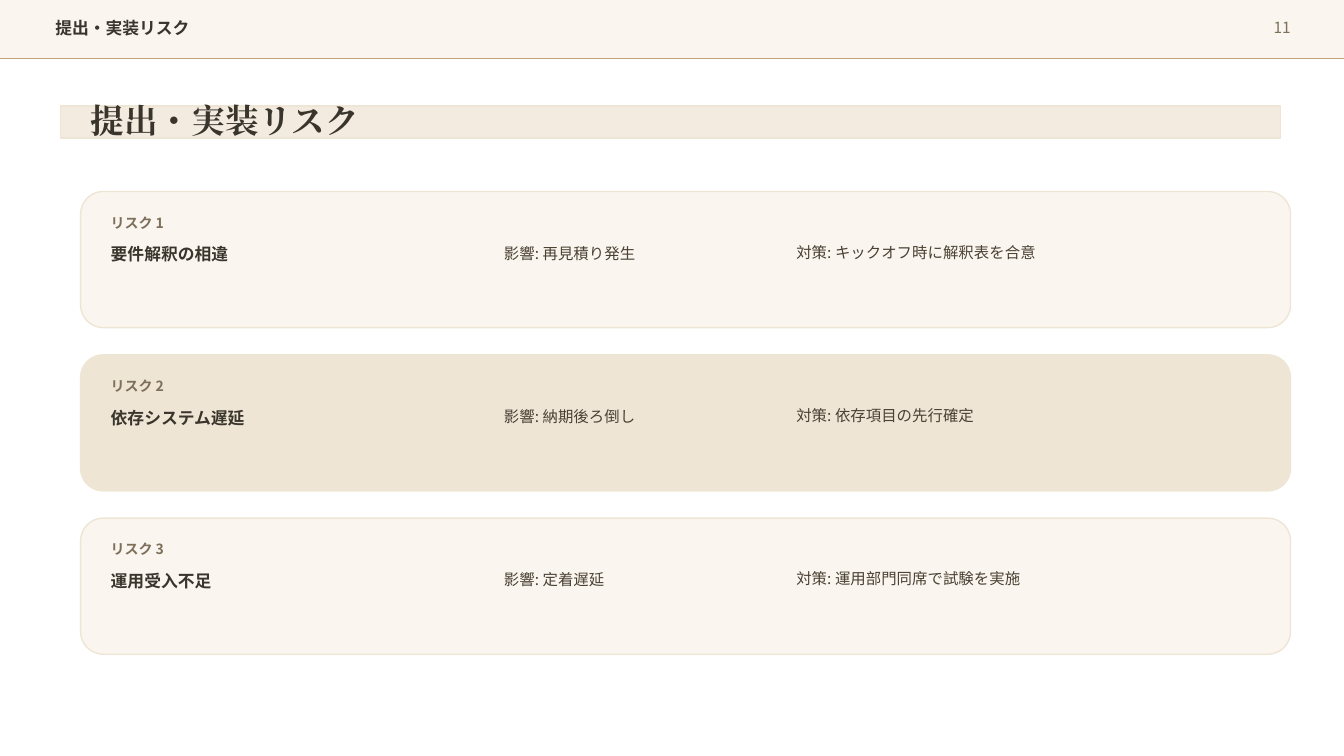
from lxml.etree import SubElement
from pptx import Presentation
from pptx.dml.color import RGBColor
from pptx.enum.shapes import MSO_CONNECTOR, MSO_SHAPE
from pptx.enum.text import MSO_ANCHOR, MSO_AUTO_SIZE, PP_ALIGN
from pptx.oxml.ns import qn
from pptx.util import Pt

PX = 9144  # 100 px to the inch
WIDTH, HEIGHT = 1333, 750
COLORS = {
    "ink": "3A352C",
    "body": "4A4033",
    "muted": "7D6F5A",
    "cream": "FAF6EF",
    "sand": "EFE5D5",
    "gold": "C0A577",
}
RISKS = [
    ("要件解釈の相違", "再見積り発生", "キックオフ時に解釈表を合意", "cream"),
    ("依存システム遅延", "納期後ろ倒し", "依存項目の先行確定", "sand"),
    ("運用受入不足", "定着遅延", "運用部門同席で試験を実施", "cream"),
]
CARD_TOP, CARD_HEIGHT, CARD_PITCH = 190, 135, 162


def color(name):
    return RGBColor.from_string(COLORS[name])


def write(tf, text, size=11, ink="body", bold=False, font="Noto Sans CJK JP",
          align=PP_ALIGN.LEFT, anchor=MSO_ANCHOR.MIDDLE):
    tf.word_wrap = True
    tf.auto_size = MSO_AUTO_SIZE.NONE
    tf.vertical_anchor = anchor
    p = tf.paragraphs[0]
    p.alignment = align
    r = p.add_run()
    r.text = text
    r.font.size = Pt(size)
    r.font.bold = bold
    r.font.color.rgb = color(ink)
    r.font.name = font
    SubElement(r.font._element, qn("a:ea"), typeface=font)


class RiskSlide:
    def __init__(self, prs):
        self.s = prs.slides.add_slide(prs.slide_layouts[5])

    def title(self, text, x, y, w, h, **style):
        sp = self.s.shapes.title
        sp.left, sp.top, sp.width, sp.height = (v * PX for v in (x, y, w, h))
        self.s.shapes._spTree.append(sp._element)  # bring in front of the band
        write(sp.text_frame, text, **style)

    def text(self, text, x, y, w, h, **style):
        sp = self.s.shapes.add_textbox(*(v * PX for v in (x, y, w, h)))
        write(sp.text_frame, text, **style)

    def box(self, x, y, w, h, fill, line, kind=MSO_SHAPE.RECTANGLE, opacity=100):
        sp = self.s.shapes.add_shape(kind, *(v * PX for v in (x, y, w, h)))
        sp.shadow.inherit = False
        sp.fill.solid()
        sp.fill.fore_color.rgb = color(fill)
        sp.line.color.rgb = color(line)
        sp.line.width = Pt(1)
        if opacity < 100:
            clr = sp._element.spPr.find(qn("a:solidFill"))[0]
            SubElement(clr, qn("a:alpha"), val=str(opacity * 1000))

    def rule(self, x1, y1, x2, y2, line):
        sp = self.s.shapes.add_connector(
            MSO_CONNECTOR.STRAIGHT, *(v * PX for v in (x1, y1, x2, y2)))
        sp.line.color.rgb = color(line)
        sp.line.width = Pt(1)
        SubElement(sp._element.spPr, qn("a:effectLst"))

    def risk_card(self, number, y, name, impact, measure, fill):
        self.box(80, y, 1200, CARD_HEIGHT, fill, "sand", MSO_SHAPE.ROUNDED_RECTANGLE)
        self.text(f"リスク {number}", 100, y + 20, 120, 22, size=10, ink="muted", bold=True)
        row = y + 46
        self.text(name, 100, row, 370, 32, size=12, ink="ink", bold=True)
        self.text(f"影響: {impact}", 490, row, 280, 30)
        self.text(f"対策: {measure}", 780, row, 480, 58, anchor=MSO_ANCHOR.TOP)


def main():
    prs = Presentation()
    prs.slide_width, prs.slide_height = WIDTH * PX, HEIGHT * PX
    slide = RiskSlide(prs)
    heading = "提出・実装リスク"

    slide.box(60, 105, 1210, 32, "sand", "sand", opacity=75)
    slide.box(0, 0, WIDTH, 58, "cream", "cream")
    slide.rule(0, 58, WIDTH, 58, "gold")
    slide.text(heading, 45, 15, 930, 26, size=12, ink="ink", bold=True)
    slide.text("11", 1220, 14, 70, 26, ink="muted", align=PP_ALIGN.RIGHT)
    slide.title(heading, 80, 95, 1140, 48, size=24, ink="ink", bold=True,
                font="Times New Roman")

    for i, risk in enumerate(RISKS):
        slide.risk_card(i + 1, CARD_TOP + i * CARD_PITCH, *risk)

    prs.save("out.pptx")


if __name__ == "__main__":
    main()
